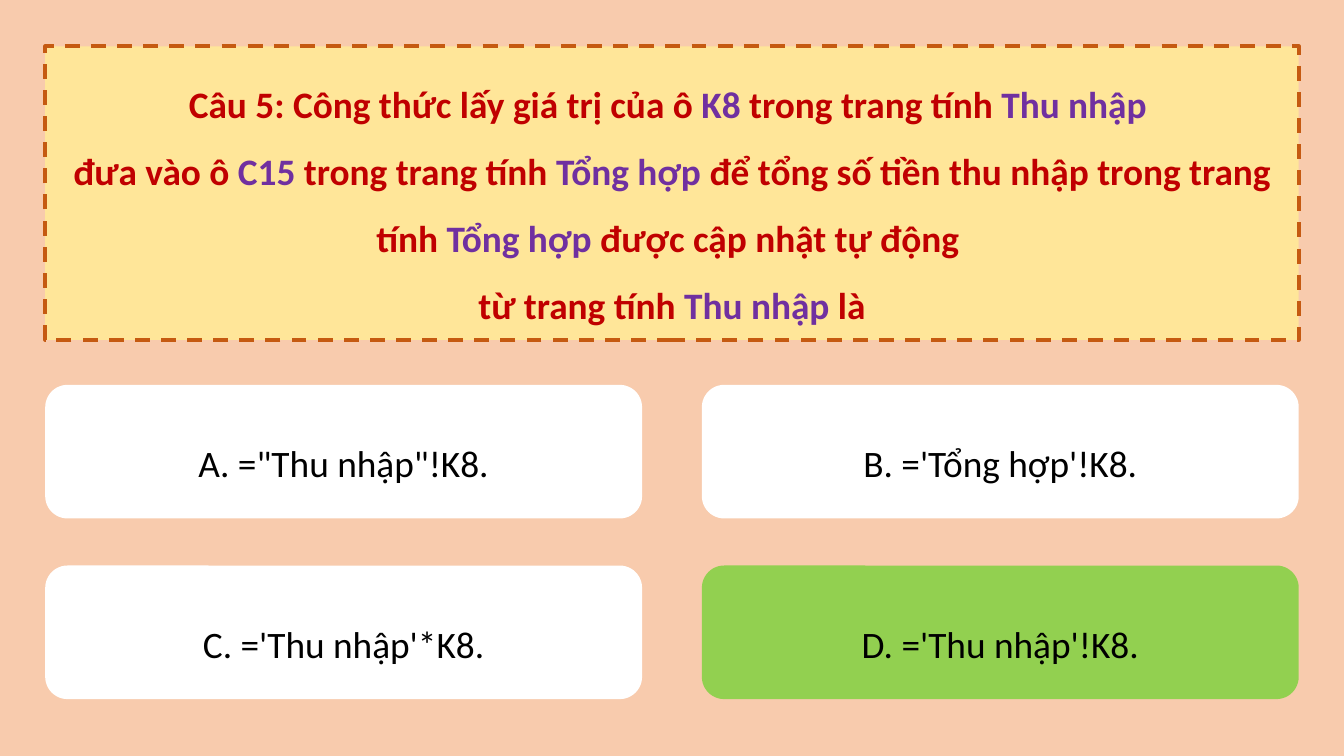
from dataclasses import dataclass

from lxml.etree import SubElement
from pptx import Presentation
from pptx.dml.color import RGBColor
from pptx.enum.dml import MSO_LINE
from pptx.enum.shapes import MSO_SHAPE
from pptx.enum.text import MSO_ANCHOR, MSO_AUTO_SIZE, PP_ALIGN
from pptx.oxml.ns import qn
from pptx.util import Cm, Pt

# Each question line is a list of (words, is_key_term).
QUESTION = [
    [("Câu 5: Công thức lấy giá trị của ô ", False), ("K8", True),
     (" trong trang tính ", False), ("Thu nhập ", True)],
    [("đưa vào ô ", False), ("C15", True), (" trong trang tính ", False),
     ("Tổng hợp ", True),
     ("để tổng số tiền thu nhập trong trang tính ", False),
     ("Tổng hợp ", True), ("được cập nhật tự động ", False)],
    [("từ trang tính ", False), ("Thu nhập ", True), ("là", False)],
]
ANSWERS = [
    "A. =\"Thu nhập\"!K8.",
    "B. ='Tổng hợp'!K8.",
    "C. ='Thu nhập'*K8.",
    "D. ='Thu nhập'!K8.",
]
CORRECT = 3


@dataclass(frozen=True)
class Theme:
    background: RGBColor = RGBColor.from_string("F8CBAD")
    panel: RGBColor = RGBColor.from_string("FFE699")
    border: RGBColor = RGBColor.from_string("C55A11")
    question: RGBColor = RGBColor.from_string("C00000")
    key_term: RGBColor = RGBColor.from_string("7030A0")
    answer: RGBColor = RGBColor.from_string("000000")
    card: RGBColor = RGBColor.from_string("FFFFFF")
    correct_card: RGBColor = RGBColor.from_string("92D050")
    font: str = "Calibri"
    size: Pt = Pt(40)
    border_width: Pt = Pt(4)
    line_spacing: float = 1.5


THEME = Theme()
SLIDE_WIDTH, SLIDE_HEIGHT = Cm(50.8), Cm(28.58)
MARGIN = Cm(1.71)
CONTENT_WIDTH = SLIDE_WIDTH - 2 * MARGIN
QUESTION_TOP, QUESTION_HEIGHT = Cm(1.75), Cm(11.1)
QUESTION_ROUNDING = 0.124
COLUMNS = 2
COLUMN_GAP, ROW_GAP = Cm(2.26), Cm(1.78)
ANSWERS_TOP, CARD_HEIGHT = Cm(14.55), Cm(5.05)
CARD_WIDTH = (CONTENT_WIDTH - COLUMN_GAP) // COLUMNS


def fill_solid(target, color):
    target.fill.solid()
    target.fill.fore_color.rgb = color


def format_paragraph(paragraph, color, bold):
    paragraph.alignment = PP_ALIGN.CENTER
    paragraph.line_spacing = THEME.line_spacing
    paragraph.font.name = THEME.font
    paragraph.font.size = THEME.size
    paragraph.font.bold = bold
    paragraph.font.color.rgb = color


def round_corners(placeholder, rounding):
    """Give a placeholder the rounded outline that only XML can set."""
    geometry = SubElement(placeholder.element.spPr, qn("a:prstGeom"),
                          prst="roundRect")
    adjustments = SubElement(geometry, qn("a:avLst"))
    SubElement(adjustments, qn("a:gd"), name="adj",
               fmla=f"val {round(rounding * 100000)}")


def add_question(slide):
    question = slide.shapes.title
    question.left, question.top = MARGIN, QUESTION_TOP
    question.width, question.height = CONTENT_WIDTH, QUESTION_HEIGHT
    round_corners(question, QUESTION_ROUNDING)
    fill_solid(question, THEME.panel)
    question.line.color.rgb = THEME.border
    question.line.width = THEME.border_width
    question.line.dash_style = MSO_LINE.DASH

    frame = question.text_frame
    frame.word_wrap = True
    frame.auto_size = MSO_AUTO_SIZE.NONE
    frame.vertical_anchor = MSO_ANCHOR.MIDDLE
    for number, phrases in enumerate(QUESTION):
        paragraph = frame.add_paragraph() if number else frame.paragraphs[0]
        format_paragraph(paragraph, THEME.question, True)
        for words, is_key_term in phrases:
            run = paragraph.add_run()
            run.text = words
            run.font.color.rgb = (
                THEME.key_term if is_key_term else THEME.question)


def add_answer(slide, index, answer):
    row, column = divmod(index, COLUMNS)
    card = slide.shapes.add_shape(
        MSO_SHAPE.ROUNDED_RECTANGLE,
        MARGIN + column * (CARD_WIDTH + COLUMN_GAP),
        ANSWERS_TOP + row * (CARD_HEIGHT + ROW_GAP),
        CARD_WIDTH, CARD_HEIGHT)
    card.shadow.inherit = False
    fill_solid(card, THEME.correct_card if index == CORRECT else THEME.card)
    card.line.fill.background()
    frame = card.text_frame
    frame.word_wrap = True
    frame.vertical_anchor = MSO_ANCHOR.MIDDLE
    frame.text = answer
    format_paragraph(frame.paragraphs[0], THEME.answer, False)


def main():
    presentation = Presentation()
    presentation.slide_width = SLIDE_WIDTH
    presentation.slide_height = SLIDE_HEIGHT
    title_only = presentation.slide_layouts.get_by_name("Title Only")
    slide = presentation.slides.add_slide(title_only)
    fill_solid(slide.background, THEME.background)
    add_question(slide)
    for index, answer in enumerate(ANSWERS):
        add_answer(slide, index, answer)
    presentation.save("out.pptx")


if __name__ == "__main__":
    main()
